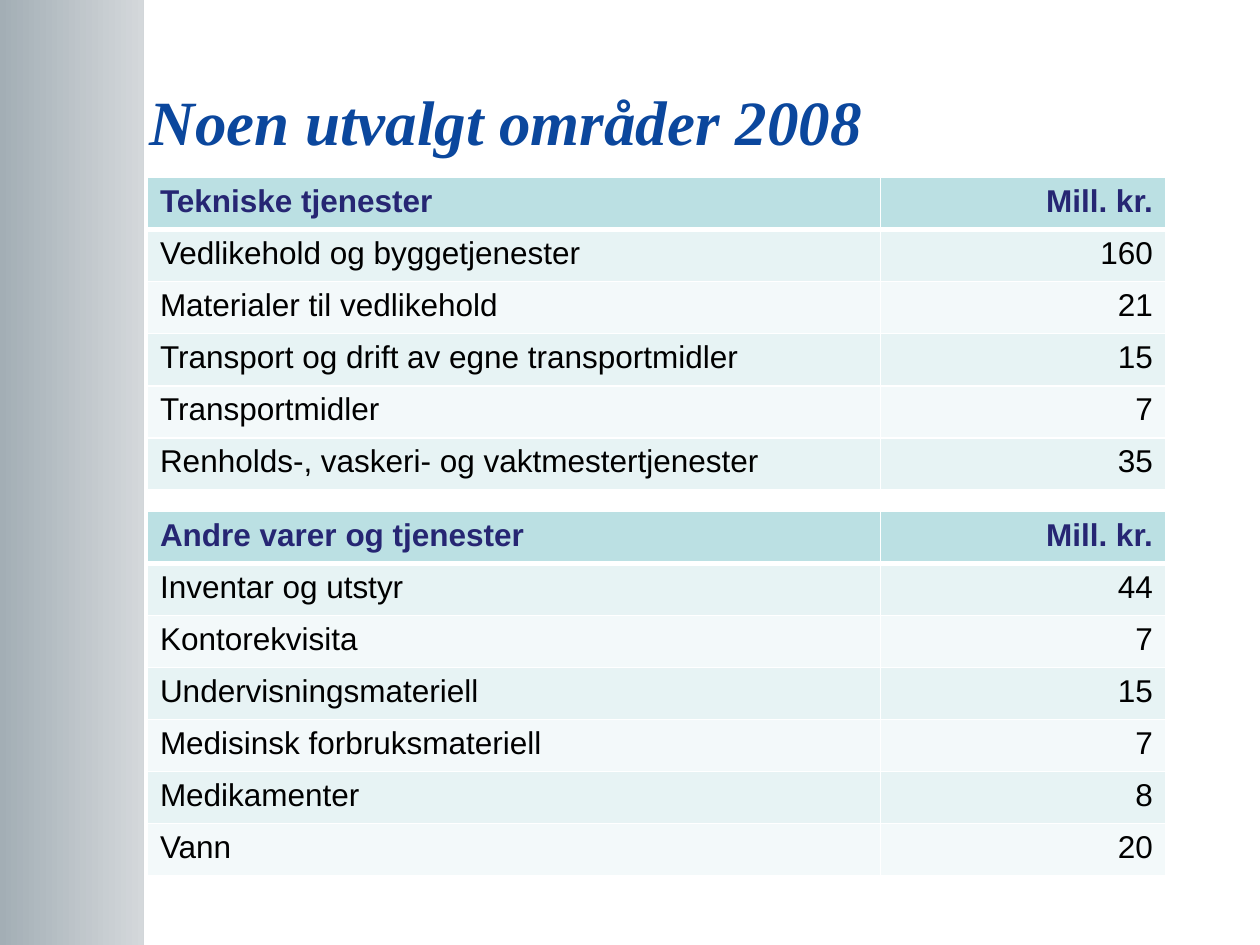
import pptx
import pptx.util
import pptx.dml.color
import pptx.enum.shapes
import pptx.enum.text
import pptx.oxml
import pptx.oxml.ns

WIDE, HIGH = 10, 7.5
ROW = 0.413  # height of a table row
SPLIT = 0.72  # share of the table width in the first column
ALIGN = pptx.enum.text.PP_ALIGN
HEAD, BANDS = "BBE0E3", ("F3F9FA", "E7F3F4")

TECH = [
    ("Tekniske tjenester", "Mill. kr."),
    ("Vedlikehold og byggetjenester", "160"),
    ("Materialer til vedlikehold", "21"),
    ("Transport og drift av egne transportmidler", "15"),
    ("Transportmidler", "7"),
    ("Renholds-, vaskeri- og vaktmestertjenester", "35"),
]
OTHER = [
    ("Andre varer og tjenester", "Mill. kr."),
    ("Inventar og utstyr", "44"),
    ("Kontorekvisita", "7"),
    ("Undervisningsmateriell", "15"),
    ("Medisinsk forbruksmateriell", "7"),
    ("Medikamenter", "8"),
    ("Vann", "20"),
]


def color(code):
    return pptx.dml.color.RGBColor.from_string(code)


def inches(*sizes):
    return [pptx.util.Inches(size) for size in sizes]


def style(font, ink, **looks):
    font.color.rgb = color(ink)
    for name, value in looks.items():
        setattr(font, name, value)


def band(slide, box):
    """Shaded strip along the left edge."""
    shape = slide.shapes.add_shape(
        pptx.enum.shapes.MSO_SHAPE.RECTANGLE, *inches(*box))
    shape.shadow.inherit = False
    shape.line.fill.background()
    shape.fill.gradient()
    shape.fill.gradient_angle = 0
    stops = zip(shape.fill.gradient_stops, (0, 1), ("A3AEB5", "D4D8DB"))
    for stop, place, code in stops:
        stop.position = place
        stop.color.rgb = color(code)


def title(slide, box, text):
    frame = slide.shapes.add_textbox(*inches(*box)).text_frame
    frame.word_wrap = True
    frame.vertical_anchor = pptx.enum.text.MSO_ANCHOR.MIDDLE
    line = frame.paragraphs[0]
    line.text = text
    style(line.font, "0B479D", name="Times New Roman",
          size=pptx.util.Pt(36), bold=True, italic=True)


def border(cell, widths):
    """White cell edges; widths in points for left, right, top, bottom."""
    props = cell._tc.get_or_add_tcPr()
    for spot, (side, width) in enumerate(zip("LRTB", widths)):
        props.insert(spot, pptx.oxml.parse_xml(
            f'<a:ln{side} {pptx.oxml.ns.nsdecls("a")} w="{pptx.util.Pt(width)}">'
            '<a:solidFill><a:srgbClr val="FFFFFF"/></a:solidFill>'
            f'</a:ln{side}>'))


def table(slide, box, rows):
    """Two columns: labels to the left, amounts to the right."""
    grid = slide.shapes.add_table(len(rows), 2, *inches(*box)).table
    for column, share in zip(grid.columns, (SPLIT, 1 - SPLIT)):
        column.width = pptx.util.Inches(box[2] * share)
    for r, row in enumerate(rows):
        grid.rows[r].height = pptx.util.Inches(box[3] / len(rows))
        for c, text in enumerate(row):
            cell = grid.cell(r, c)
            cell.fill.solid()
            cell.fill.fore_color.rgb = color(BANDS[r % 2] if r else HEAD)
            border(cell, (1, 1, 3 if r == 1 else 1, 1 if r else 3))
            line = cell.text_frame.paragraphs[0]
            line.text = text
            line.alignment = ALIGN.RIGHT if c else ALIGN.LEFT
            style(line.font, "000000" if r else "262673", name="Arial",
                  size=pptx.util.Pt(18), bold=r == 0)


def main():
    deck = pptx.Presentation()
    deck.slide_width, deck.slide_height = inches(WIDE, HIGH)
    slide = deck.slides.add_slide(deck.slide_layouts[6])

    band(slide, (0, 0, WIDE * 0.114, HIGH))
    title(slide, (1.09, 0.7, 8.13, 0.51), "Noen utvalgt områder 2008")

    # Tables stacked with one gap
    top, gap = 1.41, 0.17
    for rows in (TECH, OTHER):
        high = ROW * len(rows)
        table(slide, (1.17, top, 8.08, high), rows)
        top += high + gap

    deck.save("out.pptx")


if __name__ == "__main__":
    main()
